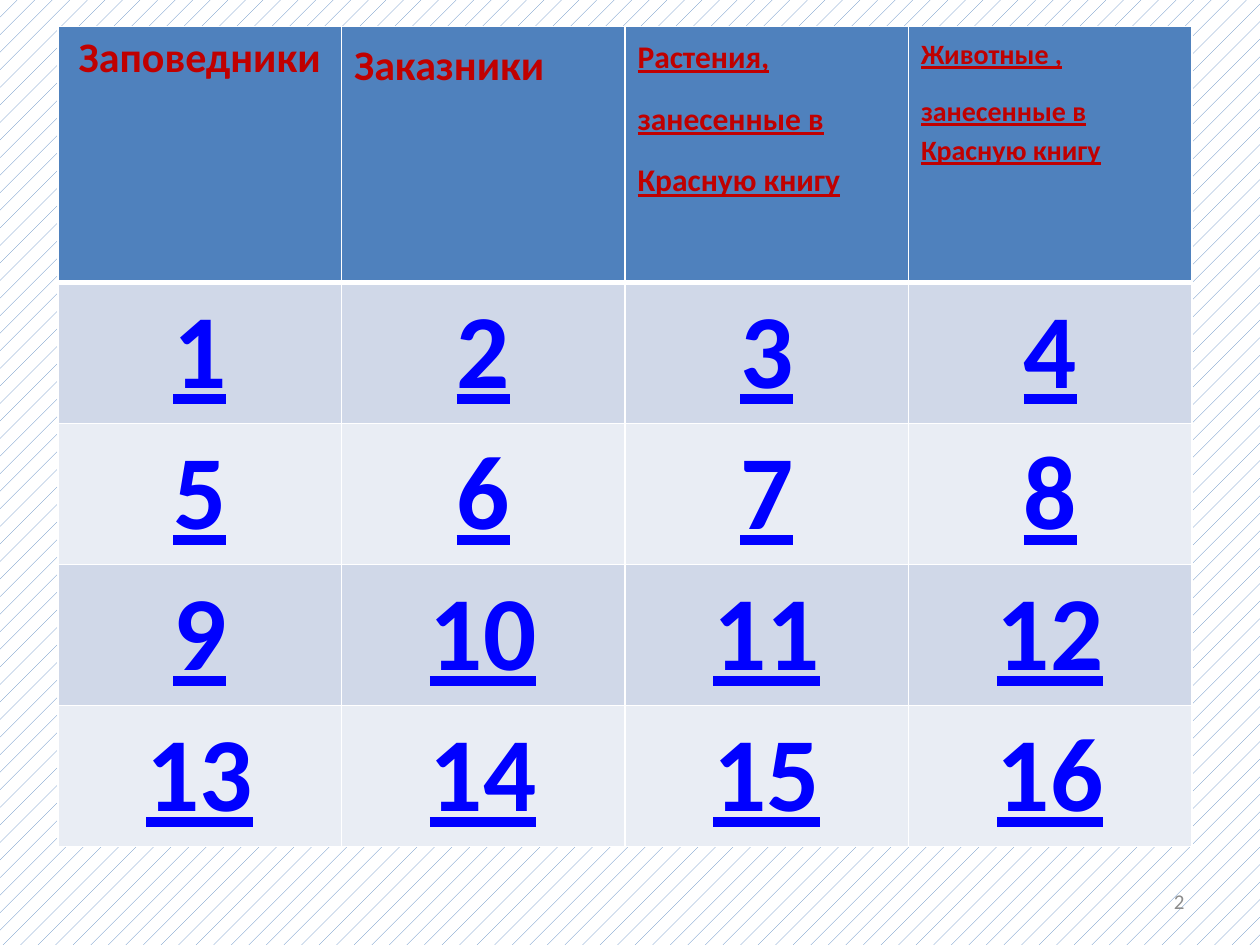
from dataclasses import dataclass

from lxml import etree
from pptx import Presentation
from pptx.dml.color import RGBColor
from pptx.enum import dml, text
from pptx.oxml import ns
from pptx.util import Inches, Pt


@dataclass(frozen=True)
class Theme:
    font: str = "Calibri"
    accent: str = "4F81BD"
    white: str = "FFFFFF"
    heading: str = "C00000"
    number: str = "0000FF"
    page: str = "8C8C8C"
    bands: tuple[str, str] = ("D0D8E8", "E9EDF4")
    number_size: int = 60
    page_size: int = 12
    border: int = 1
    header_border: int = 3


@dataclass(frozen=True)
class CellText:
    lines: tuple[str, ...]
    size: int
    color: str
    underline: bool = False
    centered: bool = False
    spaced: bool = False


THEME = Theme()
COLUMN_COUNT = 4
NUMBER_ROWS = 4
COLUMN_WIDTH = 2.25
HEADER_HEIGHT = 2.03
NUMBER_HEIGHT = 1.12

HEADERS = (
    CellText(("Заповедники",), 24, THEME.heading, centered=True),
    CellText(("Заказники",), 24, THEME.heading, spaced=True),
    CellText(("Растения,", "занесенные в", "Красную книгу"), 18, THEME.heading,
             underline=True, spaced=True),
    CellText(("Животные ,", "занесенные в Красную книгу"), 16, THEME.heading,
             underline=True, spaced=True),
)


def rgb(color: str) -> RGBColor:
    return RGBColor.from_string(color)


def set_borders(cell, widths: dict[str, int]) -> None:
    """Add white cell borders; widths maps L, R, T and B to points."""
    properties = cell._tc.get_or_add_tcPr()
    for side, width in widths.items():
        line = etree.SubElement(properties, ns.qn(f"a:ln{side}"), w=str(Pt(width)))
        fill = etree.SubElement(line, ns.qn("a:solidFill"))
        etree.SubElement(fill, ns.qn("a:srgbClr"), val=THEME.white)


def fill_cell(cell, content: CellText, fill: str, top: int, bottom: int) -> None:
    set_borders(cell, {"L": THEME.border, "R": THEME.border, "T": top, "B": bottom})
    cell.fill.solid()
    cell.fill.fore_color.rgb = rgb(fill)
    cell.text_frame.text = "\n".join(content.lines)
    for paragraph in cell.text_frame.paragraphs:
        paragraph.alignment = text.PP_ALIGN.CENTER if content.centered else text.PP_ALIGN.LEFT
        if content.spaced:
            paragraph.line_spacing = 1.15
            paragraph.space_after = Pt(10)
        for run in paragraph.runs:
            run.font.name = THEME.font
            run.font.size = Pt(content.size)
            run.font.bold = True
            run.font.underline = content.underline
            run.font.color.rgb = rgb(content.color)


def add_question_table(slide) -> None:
    table = slide.shapes.add_table(
        NUMBER_ROWS + 1, COLUMN_COUNT, Inches(0.46), Inches(0.21),
        Inches(COLUMN_COUNT * COLUMN_WIDTH),
        Inches(HEADER_HEIGHT + NUMBER_ROWS * NUMBER_HEIGHT),
    ).table
    for column in table.columns:
        column.width = Inches(COLUMN_WIDTH)
    for index, row in enumerate(table.rows):
        row.height = Inches(NUMBER_HEIGHT if index else HEADER_HEIGHT)

    for column, header in enumerate(HEADERS):
        fill_cell(table.cell(0, column), header, THEME.accent,
                  THEME.border, THEME.header_border)
    for index in range(NUMBER_ROWS * COLUMN_COUNT):
        row, column = divmod(index, COLUMN_COUNT)
        number = CellText((str(index + 1),), THEME.number_size, THEME.number,
                          underline=True, centered=True)
        fill_cell(table.cell(row + 1, column), number, THEME.bands[row % 2],
                  THEME.border if row else THEME.header_border, THEME.border)


def add_page_number(slide, number: int) -> None:
    box = slide.shapes.add_textbox(Inches(7.17), Inches(6.95), Inches(2.33), Inches(0.4))
    frame = box.text_frame
    frame.word_wrap = True
    frame.vertical_anchor = text.MSO_ANCHOR.MIDDLE
    frame.text = str(number)
    paragraph = frame.paragraphs[0]
    paragraph.alignment = text.PP_ALIGN.RIGHT
    font = paragraph.runs[0].font
    font.name = THEME.font
    font.size = Pt(THEME.page_size)
    font.color.rgb = rgb(THEME.page)


def set_background(slide) -> None:
    fill = slide.background.fill
    fill.patterned()
    fill.pattern = dml.MSO_PATTERN.PERCENT_5
    fill.fore_color.rgb = rgb(THEME.accent)
    fill.back_color.rgb = rgb(THEME.white)


def main() -> None:
    presentation = Presentation()
    presentation.slide_width = Inches(10)
    presentation.slide_height = Inches(7.5)
    slide = presentation.slides.add_slide(presentation.slide_layouts[6])
    set_background(slide)
    add_question_table(slide)
    add_page_number(slide, 2)
    presentation.save("out.pptx")


if __name__ == "__main__":
    main()
